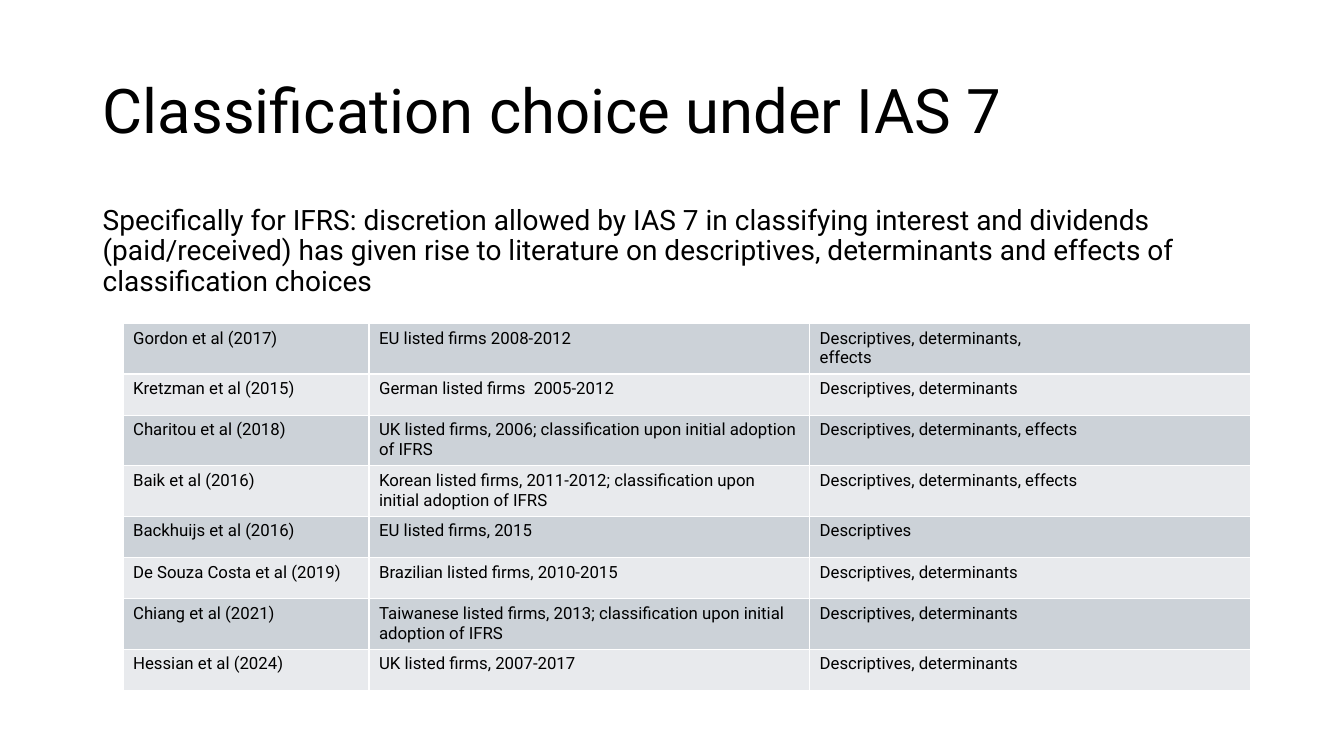
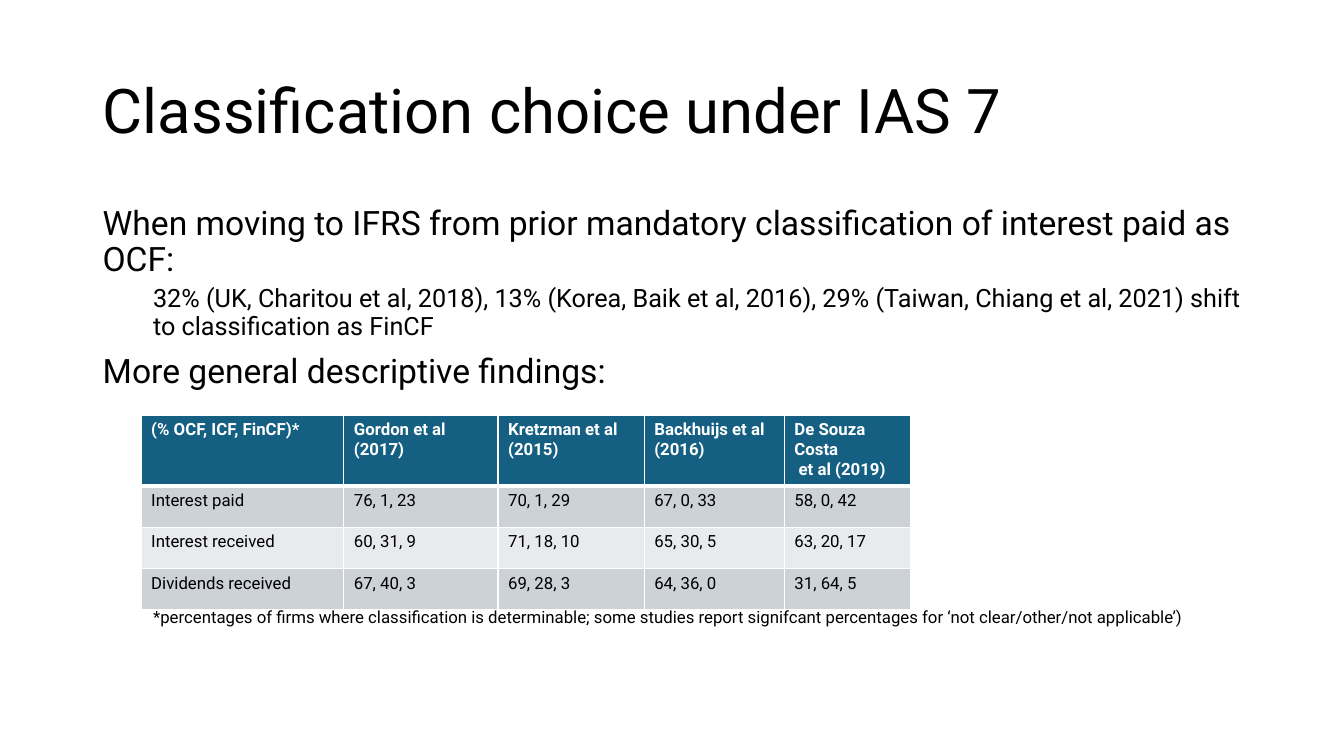
from lxml.etree import SubElement
from pptx import Presentation
from pptx.dml.color import RGBColor
from pptx.enum.text import MSO_ANCHOR, MSO_AUTO_SIZE, PP_ALIGN
from pptx.oxml.ns import qn
from pptx.util import Inches, Pt

FONT = "Roboto"
COLORS = {
    "text": "000000",
    "header": "156082",
    "band_dark": "CCD2D8",
    "band_light": "E8EAED",
    "white": "FFFFFF",
}
LEFT, WIDTH = 0.92, 11.5
INDENT = 0.5
ROW_HEIGHT = 0.41
TITLE = "Classification choice under IAS 7"

STUDIES = [
    ["Gordon et al (2017)", "EU listed firms 2008-2012", "Descriptives, determinants,\neffects"],
    ["Kretzman et al (2015)", "German listed firms  2005-2012", "Descriptives, determinants"],
    ["Charitou et al (2018)",
     "UK listed firms, 2006; classification upon initial adoption of IFRS",
     "Descriptives, determinants, effects"],
    ["Baik et al (2016)",
     "Korean listed firms, 2011-2012; classification upon initial adoption of IFRS",
     "Descriptives, determinants, effects"],
    ["Backhuijs et al (2016)", "EU listed firms, 2015", "Descriptives"],
    ["De Souza Costa et al (2019)", "Brazilian listed firms, 2010-2015",
     "Descriptives, determinants"],
    ["Chiang et al (2021)",
     "Taiwanese listed firms, 2013; classification upon initial adoption of IFRS",
     "Descriptives, determinants"],
    ["Hessian et al (2024)", "UK listed firms, 2007-2017", "Descriptives, determinants"],
]
FINDINGS = [
    ["(% OCF, ICF, FinCF)*", "Gordon et al (2017)", "Kretzman et al (2015)",
     "Backhuijs et al (2016)", "De Souza Costa\n et al (2019)"],
    ["Interest paid", "76, 1, 23", "70, 1, 29", "67, 0, 33", "58, 0, 42"],
    ["Interest received", "60, 31, 9", "71, 18, 10", "65, 30, 5", "63, 20, 17"],
    ["Dividends received", "67, 40, 3", "69, 28, 3", "64, 36, 0", "31, 64, 5"],
]

# Each text block: left, top, width, height, then (text, size, indent, space before)
# Each table: left, top, column widths, rows, whether the first row is a header
SLIDES = [
    {
        "blocks": [
            (LEFT, 2, WIDTH, 1.1, [
                ("Specifically for IFRS: discretion allowed by IAS 7 in classifying interest "
                 "and dividends (paid/received) has given rise to literature on descriptives, "
                 "determinants and effects of classification choices", 20, 0, 10),
            ]),
        ],
        "table": (1.22, 3.21, [2.44, 4.37, 4.37], STUDIES, False),
    },
    {
        "blocks": [
            (LEFT, 2, WIDTH, 2, [
                ("When moving to IFRS from prior mandatory classification of interest paid "
                 "as OCF:", 24, 0, 10),
                ("32% (UK, Charitou et al, 2018), 13% (Korea, Baik et al, 2016), 29% (Taiwan, "
                 "Chiang et al, 2021) shift to classification as FinCF", 18, INDENT, 5),
                ("More general descriptive findings:", 24, 0, 10),
            ]),
            (LEFT + INDENT, 5.99, WIDTH - INDENT, 0.3, [
                ("*percentages of firms where classification is determinable; some studies "
                 "report signifcant percentages for ‘not clear/other/not applicable’)", 12, 0, 0),
            ]),
        ],
        "table": (1.4, 4.12, [2.01, 1.53, 1.45, 1.39, 1.25], FINDINGS, True),
    },
]


def format_runs(paragraph, size, color="text", bold=False):
    for run in paragraph.runs:
        run.font.name = FONT
        run.font.size = Pt(size)
        run.font.bold = bold
        run.font.color.rgb = RGBColor.from_string(COLORS[color])


def add_border(cell, side, points):
    """Add a white line; call in the order L, R, T, B and before filling the cell."""
    properties = cell._tc.get_or_add_tcPr()
    line = SubElement(properties, qn(f"a:ln{side}"), w=str(Pt(points)))
    fill = SubElement(line, qn("a:solidFill"))
    SubElement(fill, qn("a:srgbClr"), val=COLORS["white"])


presentation = Presentation()
presentation.slide_width = Inches(13.33)
presentation.slide_height = Inches(7.5)
title_only = presentation.slide_layouts[5]

for content in SLIDES:
    slide = presentation.slides.add_slide(title_only)

    title = slide.shapes.title
    title.left, title.top = Inches(LEFT), Inches(0.4)
    title.width, title.height = Inches(WIDTH), Inches(1.45)
    title.text_frame.text = TITLE
    title.text_frame.auto_size = MSO_AUTO_SIZE.NONE
    title.text_frame.vertical_anchor = MSO_ANCHOR.MIDDLE
    heading = title.text_frame.paragraphs[0]
    heading.alignment = PP_ALIGN.LEFT
    heading.line_spacing = 0.9
    format_runs(heading, 44)

    for left, top, width, height, lines in content["blocks"]:
        box = slide.shapes.add_textbox(Inches(left), Inches(top), Inches(width), Inches(height))
        frame = box.text_frame
        frame.word_wrap = True
        frame.text = "\n".join(line[0] for line in lines)
        for paragraph, (_, size, indent, space_before) in zip(frame.paragraphs, lines):
            paragraph.line_spacing = 0.9
            paragraph.space_before = Pt(space_before)
            paragraph._p.get_or_add_pPr().set("marL", str(Inches(indent)))
            format_runs(paragraph, size)

    left, top, widths, rows, has_header = content["table"]
    table = slide.shapes.add_table(
        len(rows), len(widths), Inches(left), Inches(top),
        Inches(sum(widths)), Inches(ROW_HEIGHT * len(rows))).table
    table.first_row = has_header
    table.horz_banding = False
    for column, width in zip(table.columns, widths):
        column.width = Inches(width)

    for row_index, values in enumerate(rows):
        table.rows[row_index].height = Inches(ROW_HEIGHT)
        is_header = has_header and row_index == 0
        below_header = has_header and row_index == 1
        if is_header:
            fill_color = "header"
        else:
            fill_color = "band_light" if (row_index - has_header) % 2 else "band_dark"
        borders = {"L": 1, "R": 1, "T": 3 if below_header else 1, "B": 3 if is_header else 1}
        for column_index, value in enumerate(values):
            cell = table.cell(row_index, column_index)
            for side, points in borders.items():
                add_border(cell, side, points)
            cell.fill.solid()
            cell.fill.fore_color.rgb = RGBColor.from_string(COLORS[fill_color])
            cell.text_frame.text = value
            for paragraph in cell.text_frame.paragraphs:
                format_runs(paragraph, 12, "white" if is_header else "text", is_header)

presentation.save("out.pptx")
